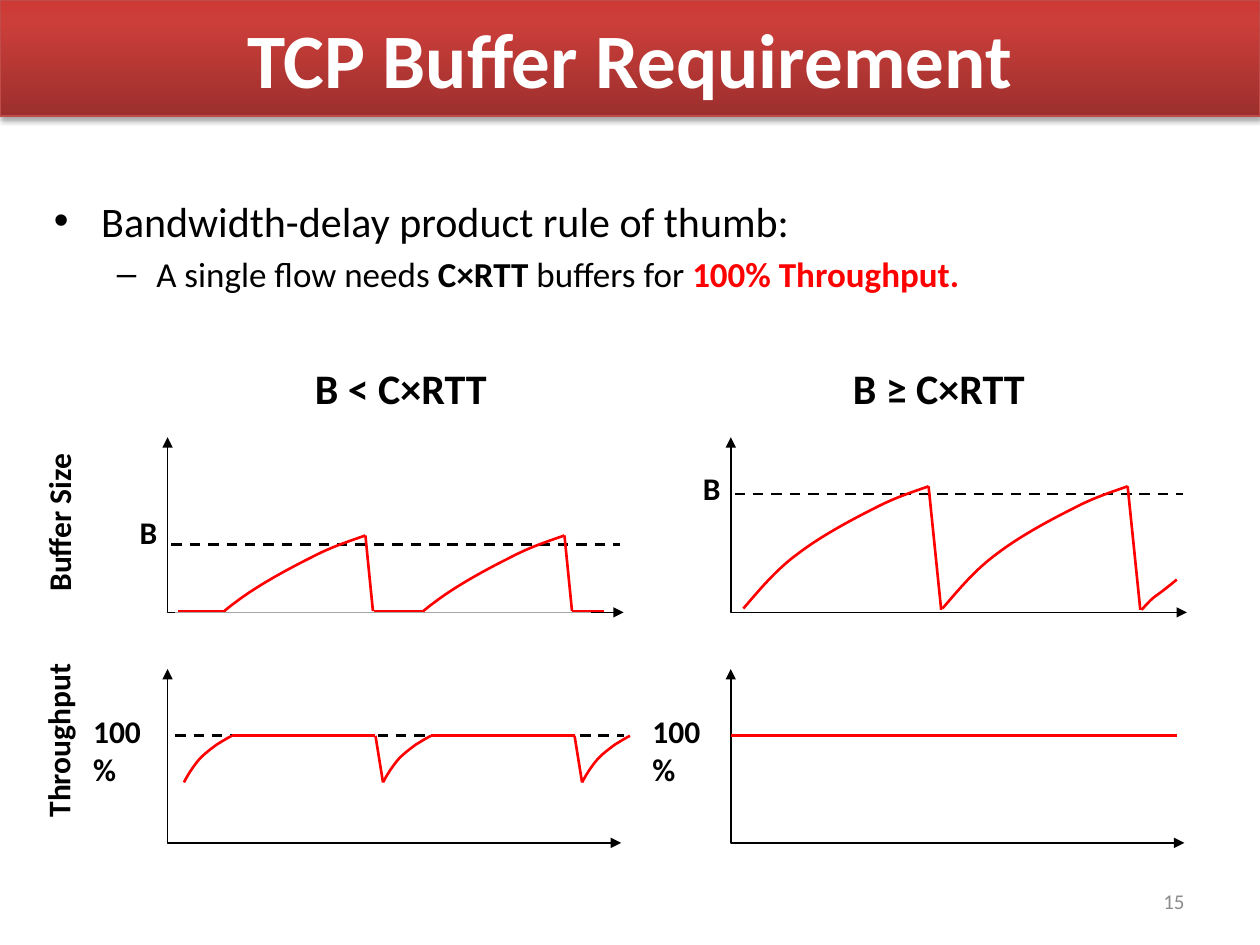
"""Build the TCP buffer requirement slide with its buffer and throughput plots."""
from dataclasses import dataclass

from lxml import etree
from pptx import Presentation
from pptx.dml.color import RGBColor
from pptx.enum.dml import MSO_LINE
from pptx.enum.shapes import MSO_CONNECTOR, MSO_SHAPE
from pptx.enum.text import MSO_ANCHOR, PP_ALIGN
from pptx.oxml import parse_xml
from pptx.oxml.ns import qn
from pptx.util import Inches, Pt

STRAIGHT, RECT, DASH = MSO_CONNECTOR.STRAIGHT, MSO_SHAPE.RECTANGLE, MSO_LINE.DASH
TOP, MIDDLE = MSO_ANCHOR.TOP, MSO_ANCHOR.MIDDLE
LEFT, CENTER, RIGHT = PP_ALIGN.LEFT, PP_ALIGN.CENTER, PP_ALIGN.RIGHT
COLORS = {"black": "000000", "red": "FF0000", "white": "FFFFFF", "gray": "8C8C8C",
          "bar_line": "BF4C48"}
BAR_STOPS = ((0, "9C2F2D"), (80, "CB3E3A"), (100, "CE3B37"))
FONT = "Calibri"
NS = 'xmlns:a="http://schemas.openxmlformats.org/drawingml/2006/main"'
PERIOD = 1.58
FULL_Y = 5.84
RAMP = ((0, 0), (.13, -.15), (.26, -.31), (.44, -.44), (.61, -.57),
        (.85, -.7), (1.03, -.79), (1.2, -.88), (1.33, -.92), (1.47, -.97))
RECOVERY = ((0, 0), (.03, -.06), (.07, -.12), (.11, -.17), (.15, -.22),
            (.22, -.27), (.26, -.3), (.31, -.33), (.34, -.35), (.38, -.37))
RESTART = ((0, 0), (.14, -.15), (.05, -.05), (.28, -.24))


@dataclass
class Label:
    text: str
    left: float
    top: float
    width: float
    height: float
    size: float = 18
    color: str = "black"
    bold: bool = True
    align: PP_ALIGN = LEFT
    anchor: MSO_ANCHOR = TOP
    wrap: bool = True
    rotation: int = 0


@dataclass
class Segment:
    x1: float
    y1: float
    x2: float
    y2: float
    color: str = "red"
    dashed: bool = False


LABELS = (
    Label("TCP Buffer Requirement", 0, 0, 10, .92, 44, "white", align=CENTER, anchor=MIDDLE),
    Label("Throughput", -.4, 5.83, 1.72, .4, align=RIGHT, rotation=270),
    Label("Buffer Size", -.19, 3.96, 1.31, .4, align=RIGHT, wrap=False, rotation=270),
    Label("100%", 5.08, 5.6, .59, .59),
    Label("B", 5.48, 3.67, .26, .59),
    Label("B ≥ C×RTT", 6.67, 2.83, 1.58, .5, 24, wrap=False),
    Label("100%", .64, 5.6, .59, .59),
    Label("B", 1.01, 4.02, .26, .59),
    Label("B < C×RTT", 2.4, 2.83, 1.58, .5, 24, wrap=False),
    Label("15", 7.17, 6.95, 2.33, .4, 12, "gray", False, RIGHT, MIDDLE),
)


def rgb(name: str) -> RGBColor:
    """Return the named colour."""
    return RGBColor.from_string(COLORS[name])


def add_label(shapes, label: Label) -> None:
    """Add a one-paragraph text box."""
    sp = shapes.add_textbox(Inches(label.left), Inches(label.top),
                            Inches(label.width), Inches(label.height))
    sp.rotation = label.rotation
    tf = sp.text_frame
    tf.word_wrap, tf.vertical_anchor = label.wrap, label.anchor
    p = tf.paragraphs[0]
    p.text, p.alignment = label.text, label.align
    p.font.name, p.font.size, p.font.bold = FONT, Pt(label.size), label.bold
    p.font.color.rgb = rgb(label.color)


def add_bar(shapes) -> None:
    """Add the shaded title bar."""
    sp = shapes.add_shape(RECT, 0, 0, Inches(10), Inches(.92))
    stops = "".join(f'<a:gs pos="{pos * 1000}"><a:srgbClr val="{color}"/></a:gs>'
                    for pos, color in BAR_STOPS)
    sp._element.spPr.find(qn("a:prstGeom")).addnext(parse_xml(
        f'<a:gradFill {NS} rotWithShape="1"><a:gsLst>{stops}</a:gsLst>'
        '<a:lin ang="16200000" scaled="0"/></a:gradFill>'))
    sp.line.color.rgb, sp.line.width = rgb("bar_line"), Pt(.75)
    sp.shadow.inherit = False
    sp._element.spPr.find(qn("a:effectLst")).append(parse_xml(
        f'<a:outerShdw {NS} blurRad="{Pt(3.1)}" dist="{Pt(1.8)}" dir="5400000" rotWithShape="0">'
        '<a:srgbClr val="000000"><a:alpha val="35000"/></a:srgbClr></a:outerShdw>'))


def add_body(shapes) -> None:
    """Add the bulleted rule of thumb."""
    tf = shapes.add_textbox(Inches(.33), Inches(1.5), Inches(9), Inches(1.08)).text_frame
    tf.word_wrap = True
    bullets = (
        ("•", 24, 3 / 8, 3 / 8, (("Bandwidth-delay product rule of thumb:", False, "black"),)),
        ("–", 20, 13 / 16, 5 / 16, (("A single flow needs ", False, "black"),
                                    ("C×RTT ", True, "black"),
                                    ("buffers for ", False, "black"),
                                    ("100% Throughput.", True, "red"))),
    )
    for i, (bullet, size, margin, hanging, runs) in enumerate(bullets):
        p = tf.add_paragraph() if i else tf.paragraphs[0]
        p.level, p.space_before = i, Pt(size * .2)
        p.font.name, p.font.size = FONT, Pt(size)
        pPr = p._p.get_or_add_pPr()
        pPr.set("marL", str(Inches(margin)))
        pPr.set("indent", str(-Inches(hanging)))
        spacing = pPr.find(qn("a:spcBef"))
        spacing.addnext(parse_xml(f'<a:buChar {NS} char="{bullet}"/>'))
        spacing.addnext(parse_xml(f'<a:buFont {NS} typeface="Arial"/>'))
        for text, bold, color in runs:
            r = p.add_run()
            r.text, r.font.bold = text, bold
            r.font.color.rgb = rgb(color)


def add_segment(shapes, seg: Segment) -> None:
    """Add a straight plot line."""
    line = shapes.add_connector(STRAIGHT, Inches(seg.x1), Inches(seg.y1),
                                Inches(seg.x2), Inches(seg.y2))
    line.line.color.rgb, line.line.width = rgb(seg.color), Pt(1.5)
    if seg.dashed:
        line.line.dash_style = DASH
    etree.SubElement(line._element.spPr, qn("a:effectLst"))


def add_outline(shapes, points, color: str = "red", width: float = 1.5):
    """Add an open unfilled outline through the points."""
    emu = [(Inches(x), Inches(y)) for x, y in points]
    builder = shapes.build_freeform(*emu[0])
    builder.add_line_segments(emu[1:], close=False)
    sp = builder.convert_to_shape()
    sp.fill.background()
    sp.line.color.rgb, sp.line.width = rgb(color), Pt(width)
    sp.shadow.inherit = False
    return sp


def add_curve(shapes, x: float, y: float, offsets) -> None:
    """Add chained cubic curves given as offsets from a start point."""
    sp = add_outline(shapes, [(x + dx, y + dy) for dx, dy in offsets])
    steps = list(sp._element.iter(qn("a:lnTo")))
    for i in range(0, len(steps), 3):
        cubic = etree.SubElement(steps[i].getparent(), qn("a:cubicBezTo"))
        for step in steps[i:i + 3]:
            cubic.append(step[0])
            step.getparent().remove(step)


def add_axes(shapes, x: float, top: float, width: float, bottom: float) -> None:
    """Add a pair of axes with an arrowhead at each end."""
    sp = add_outline(shapes, ((x, top), (x, bottom), (x + width, bottom)), "black", 1)
    for end in ("a:headEnd", "a:tailEnd"):
        etree.SubElement(sp.line._ln, qn(end)).set("type", "triangle")


def add_plots(shapes, x: float, mask_top: float, base: float, limit: float) -> None:
    """Add the axes, buffer limit and buffer ramps of one column."""
    add_segment(shapes, Segment(x + .03, limit, x + 3.59, limit, "black", True))
    for i in range(2):
        add_curve(shapes, x + .1 + i * PERIOD, base, RAMP)
    add_axes(shapes, x, 3.47, 3.62, 4.86)
    mask = shapes.add_shape(RECT, Inches(x + .06), Inches(mask_top), Inches(3.3), Inches(.49))
    mask.fill.solid()
    mask.fill.fore_color.rgb = rgb("white")
    mask.line.fill.background()
    mask.shadow.inherit = False
    add_axes(shapes, x, 5.31, 3.6, 6.69)


def main() -> None:
    """Build and save the slide."""
    prs = Presentation()
    prs.slide_width, prs.slide_height = Inches(10), Inches(7.5)
    shapes = prs.slides.add_slide(prs.slide_layouts[6]).shapes
    add_bar(shapes)
    add_body(shapes)
    add_plots(shapes, 5.8, 4.88, 4.83, 3.92)
    add_curve(shapes, 9.06, 4.84, RESTART)
    add_plots(shapes, 1.33, 4.86, 5.22, 4.32)
    segments = [Segment(5.8, FULL_Y, 9.34, FULL_Y),
                Segment(1.39, FULL_Y, 4.95, FULL_Y, "black", True)]
    for i in range(2):
        shift = i * PERIOD
        segments += [Segment(7.37 + shift, 3.86, 7.47 + shift, 4.84),
                     Segment(2.9 + shift, 4.25, 2.96 + shift, 4.85),
                     Segment(1.84 + shift, FULL_Y, 2.98 + shift, FULL_Y),
                     Segment(2.98 + shift, FULL_Y, 3.04 + shift, 6.21)]
    segments += [Segment(x1, 4.85, x2, 4.85)
                 for x1, x2 in ((1.41, 1.79), (2.97, 3.35), (4.54, 4.79))]
    for seg in segments:
        add_segment(shapes, seg)
    for i in range(3):
        add_curve(shapes, 1.46 + i * PERIOD, 6.21, RECOVERY)
    for label in LABELS:
        add_label(shapes, label)
    prs.save("out.pptx")


if __name__ == "__main__":
    main()
